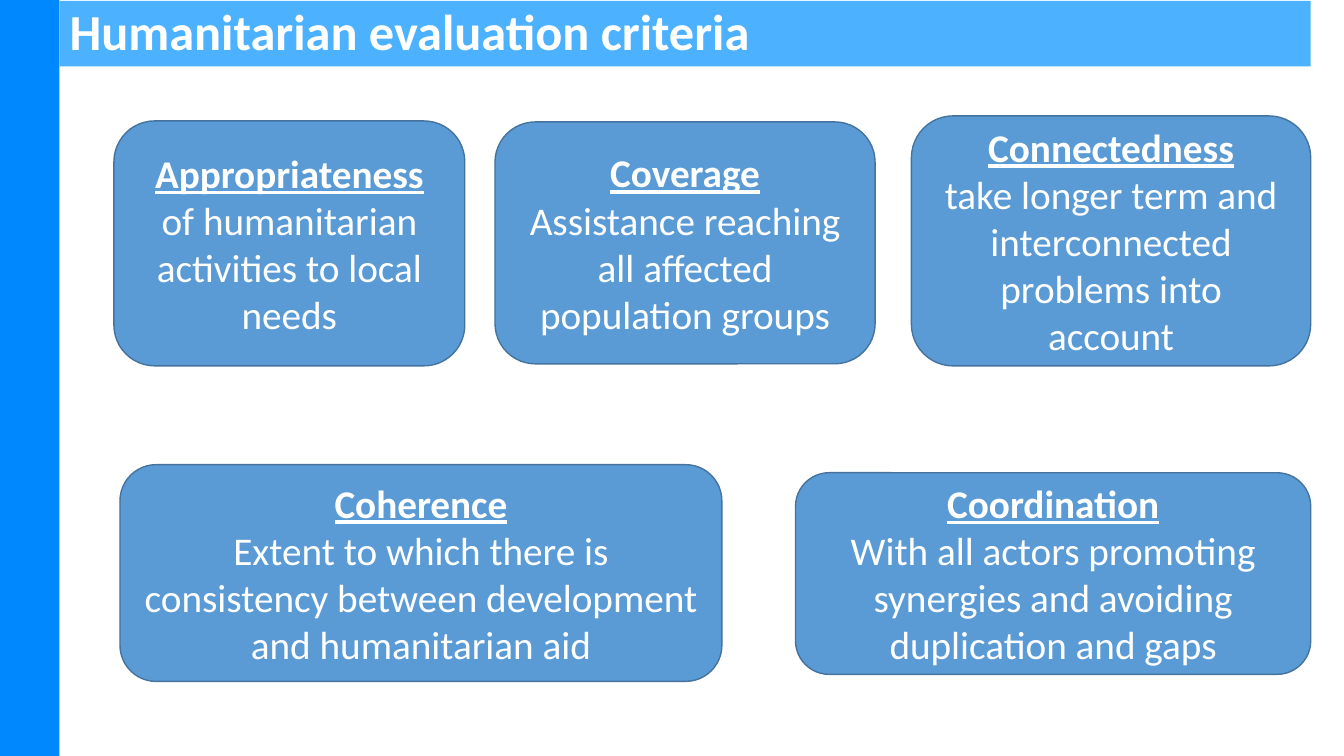
from lxml.etree import SubElement
from pptx import Presentation
from pptx.dml.color import RGBColor
from pptx.enum.shapes import MSO_SHAPE as SHAPE
from pptx.enum.text import MSO_ANCHOR as ANCHOR, MSO_AUTO_SIZE as AUTO, PP_ALIGN as ALIGN
from pptx.oxml.ns import qn
from pptx.util import Inches, Pt

TITLE = "Humanitarian evaluation criteria"
# name, explanation, (left, top, width, height) in inches
CRITERIA = [
    ("Appropriateness", "of humanitarian activities to local needs",
     (1.13, 1.2, 3.48, 2.43)),
    ("Coverage", "Assistance reaching all affected population groups",
     (4.91, 1.21, 3.77, 2.4)),
    ("Connectedness", "take longer term and interconnected problems into account",
     (9.04, 1.15, 3.96, 2.48)),
    ("Coherence", "Extent to which there is consistency between development and humanitarian aid",
     (1.19, 4.61, 5.97, 2.15)),
    ("Coordination", "With all actors promoting synergies and avoiding duplication and gaps",
     (7.89, 4.69, 5.11, 2)),
]
SIDEBAR = (0, 0, 0.59, 7.5)
TITLE_BAR = (0.59, 0.01, 12.41, 0.65)
COLORS = {"side": "0088FF", "bar": "0091FF", "box": "5B9BD5", "edge": "43739E", "text": "FFFFFF"}
HEADING = {"size": Pt(28), "bold": True, "underline": True}
BODY = {"size": Pt(28), "bold": False, "underline": False}


def rgb(name):
    return RGBColor.from_string(COLORS[name])


def fill(sp, color):
    sp.fill.solid()
    sp.fill.fore_color.rgb = rgb(color)


def add_box(slide, kind, place, color):
    sp = slide.shapes.add_shape(kind, *map(Inches, place))
    sp.shadow.inherit = False
    fill(sp, color)
    return sp


def write(p, text, style):
    r = p.add_run()
    r.text = text
    r.font.name = "Calibri"
    r.font.color.rgb = rgb("text")
    for key, value in style.items():
        setattr(r.font, key, value)


def add_title(slide):
    sp = slide.shapes.title
    sp.left, sp.top, sp.width, sp.height = map(Inches, TITLE_BAR)
    fill(sp, "bar")
    color = sp._element.spPr.find(qn("a:solidFill"))[0]
    SubElement(color, qn("a:alpha"), val="70000")
    tf = sp.text_frame
    tf.word_wrap, tf.auto_size, tf.vertical_anchor = True, AUTO.NONE, ANCHOR.MIDDLE
    p = tf.paragraphs[0]
    p.alignment, p.line_spacing = ALIGN.LEFT, 0.9
    write(p, TITLE, {"size": Pt(36), "bold": True})


def add_criterion(slide, name, explanation, place):
    sp = add_box(slide, SHAPE.ROUNDED_RECTANGLE, place, "box")
    sp.line.color.rgb = rgb("edge")
    sp.line.width = Pt(1)
    tf = sp.text_frame
    tf.word_wrap, tf.vertical_anchor = True, ANCHOR.MIDDLE
    for p, text, style in ((tf.paragraphs[0], name, HEADING),
                           (tf.add_paragraph(), explanation, BODY)):
        p.alignment = ALIGN.CENTER
        write(p, text, style)


def main():
    prs = Presentation()
    prs.slide_width, prs.slide_height = Inches(13.33), Inches(7.5)
    slide = prs.slides.add_slide(prs.slide_layouts[5])
    add_title(slide)
    add_box(slide, SHAPE.RECTANGLE, SIDEBAR, "side").line.fill.background()
    for criterion in CRITERIA:
        add_criterion(slide, *criterion)
    prs.save("out.pptx")


if __name__ == "__main__":
    main()
